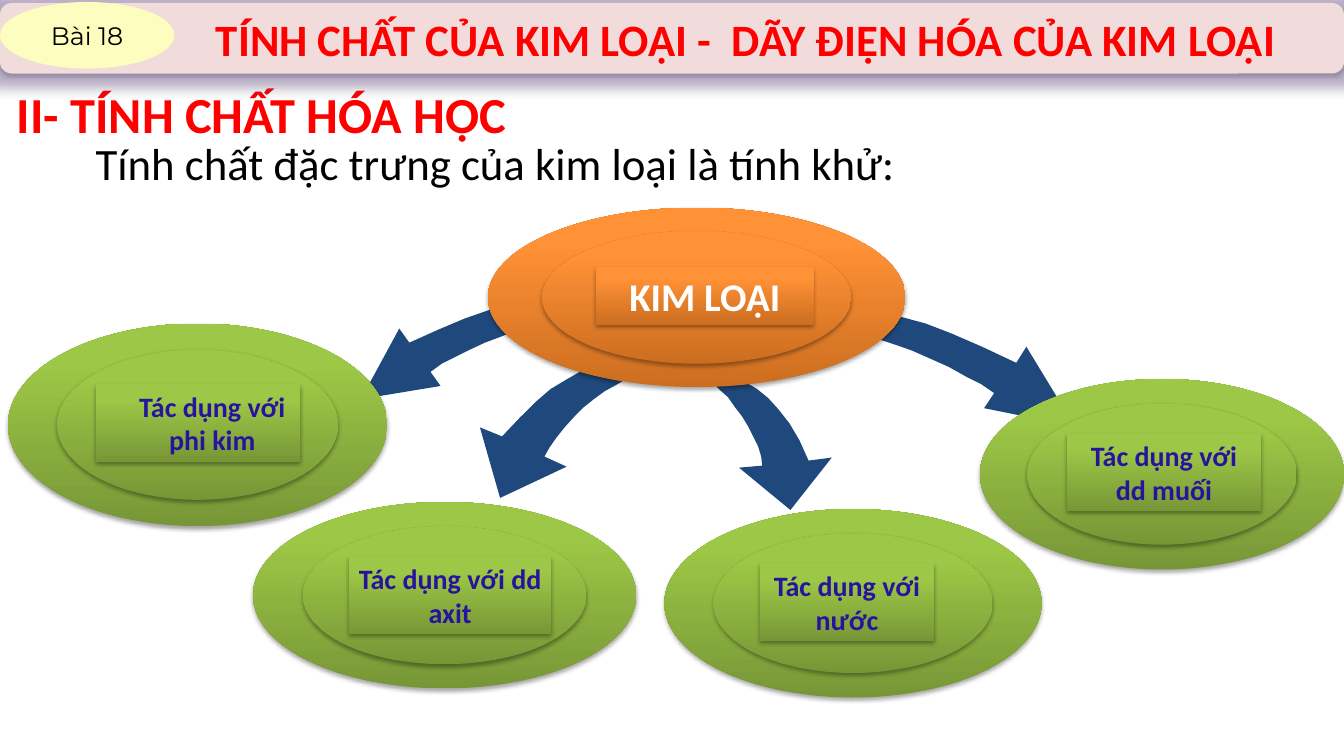
from pptx import Presentation
from pptx.dml.color import RGBColor
from pptx.enum.shapes import MSO_SHAPE
from pptx.enum.text import MSO_ANCHOR, PP_ALIGN
from pptx.oxml import parse_xml
from pptx.oxml.ns import nsdecls, qn
from pptx.util import Inches, Pt

ELLIPSE, RECT, ROUND = MSO_SHAPE.OVAL, MSO_SHAPE.RECTANGLE, MSO_SHAPE.ROUNDED_RECTANGLE
LEFT, CENTER = PP_ALIGN.LEFT, PP_ALIGN.CENTER
MIDDLE, TOP = MSO_ANCHOR.MIDDLE, MSO_ANCHOR.TOP
COLS, ROWS, CELL = 1333, 750, Inches(0.01)
INNER = 0.74
GREEN, ORANGE = ("779737", "9DC746"), ("CC6E20", "FF9136")
NAVY, RED, BLACK, WHITE, INDIGO = "1F497D", "FF0000", "000000", "FFFFFF", "27149C"
PINK, CREAM, PURPLE = "F2DCDB", "FEFDC0", "8064A2"

ARROWS = [
    [(645, 373), (631, 367), (617, 364), (603, 363), (589, 365), (575, 369), (561, 377),
     (546, 386), (531, 399), (515, 415), (498, 433), (476, 424), (496, 494), (562, 463),
     (540, 453), (545, 444), (552, 434), (560, 424), (569, 414), (579, 404), (589, 396),
     (600, 388), (611, 382), (621, 376), (630, 373), (638, 372), (644, 374)],
    [(815, 330), (823, 321), (833, 315), (844, 310), (859, 309), (876, 310), (896, 315),
     (918, 321), (944, 331), (974, 344), (1008, 360), (1018, 344), (1066, 423), (976, 405),
     (986, 390), (973, 381), (957, 373), (941, 364), (923, 356), (905, 348), (888, 342),
     (870, 336), (855, 331), (841, 328), (830, 327), (821, 328), (816, 331)],
    [(685, 371), (700, 370), (714, 371), (727, 374), (739, 379), (751, 386), (762, 395),
     (772, 406), (783, 420), (793, 437), (802, 457), (825, 454), (784, 506), (733, 464),
     (756, 462), (755, 453), (752, 443), (747, 433), (742, 423), (736, 413), (729, 404),
     (722, 394), (714, 387), (707, 380), (699, 375), (692, 372), (686, 372)],
    [(576, 321), (569, 312), (560, 306), (549, 301), (536, 300), (521, 300), (504, 303),
     (484, 308), (461, 316), (435, 327), (406, 340), (396, 326), (358, 396), (437, 383),
     (427, 369), (438, 361), (452, 354), (466, 347), (481, 340), (497, 334), (512, 328),
     (527, 323), (541, 320), (553, 318), (563, 317), (571, 318), (575, 321)],
]

BUBBLES = [
    ("Tác dụng với phi kim", (8, 321, 376, 201), (95, 381, 203, 77), 38),
    ("Tác dụng với dd axit", (251, 498, 380, 185), (346, 552, 201, 77), 10),
    ("Tác dụng với nước", (659, 505, 374, 187), (754, 559, 172, 77), 10),
    ("Tác dụng với dd muối", (972, 376, 361, 189), (1058, 430, 193, 77), 10),
]


def rgb(value):
    """Turn a hex string into a colour."""
    return RGBColor.from_string(value)


def grid(*cells):
    """Turn grid cells into lengths."""
    return [round(c * CELL) for c in cells]


class Deck:
    """Hold the style and the current slide."""

    font = "Calibri"

    def __init__(self):
        """Open a deck with one title-only slide."""
        self.prs = Presentation()
        self.prs.slide_width, self.prs.slide_height = grid(COLS, ROWS)
        self.s = self.prs.slides.add_slide(self.prs.slide_layouts[5])

    def label(self, sp, text, size, color, bold=True, align=CENTER, anchor=MIDDLE, font=None):
        """Fill a shape with one formatted paragraph."""
        tf = sp.text_frame
        tf.word_wrap = True
        tf.vertical_anchor = anchor
        p = tf.paragraphs[0]
        p.text, p.alignment = text, align
        p.font.name, p.font.size, p.font.bold = font or self.font, Pt(size), bold
        p.font.color.rgb = rgb(color)
        return tf

    def effect(self, sp, tag, attrs, color, alpha):
        """Append one effect to a shape."""
        sp.element.spPr.find(qn("a:effectLst")).append(parse_xml(
            f'<a:{tag} {nsdecls("a")} {attrs}><a:srgbClr val="{color}">'
            f'<a:alpha val="{alpha}000"/></a:srgbClr></a:{tag}>'))

    def shadow(self, sp):
        """Give a shape the soft drop shadow."""
        self.effect(sp, "outerShdw", 'blurRad="40000" dist="23000" dir="5400000" rotWithShape="0"',
                    BLACK, 35)

    def shape(self, kind, box, fill, shapes=None):
        """Add a plain or graded preset shape without outline."""
        sp = (shapes or self.s.shapes).add_shape(kind, *grid(*box))
        sp.shadow.inherit = False
        sp.line.fill.background()
        if isinstance(fill, str):
            sp.fill.solid()
            sp.fill.fore_color.rgb = rgb(fill)
        else:
            sp.fill.gradient()
            sp.fill.gradient_angle = 90
            for stop, color, position in zip(sp.fill.gradient_stops, fill, (0, 0.8)):
                stop.color.rgb, stop.position = rgb(color), position
        return sp

    def text(self, box, text, size, color, bold):
        """Add a left-aligned text box."""
        sp = self.s.shapes.add_textbox(*grid(*box))
        self.label(sp, text, size, color, bold, LEFT, TOP)

    def arrow(self, points):
        """Add a curved arrow outline."""
        builder = self.s.shapes.build_freeform(*points[0], scale=CELL)
        builder.add_line_segments(points[1:], close=True)
        sp = builder.convert_to_shape()
        sp.shadow.inherit = False
        sp.fill.solid()
        sp.fill.fore_color.rgb = rgb(NAVY)
        sp.line.fill.background()

    def bubble(self, text, outer, tag, fill, size, color, inset=10):
        """Group two concentric ellipses and a label."""
        x, y, w, h = outer
        gap = (1 - INNER) / 2
        inner = (x + w * gap, y + h * gap, w * INNER, h * INNER)
        group = self.s.shapes.add_group_shape()
        for kind, box in ((ELLIPSE, outer), (ELLIPSE, inner), (RECT, tag)):
            sp = self.shape(kind, box, fill, group.shapes)
            self.shadow(sp)
        tf = self.label(sp, text, size, color)
        tf.margin_left = round(inset * CELL)

    def header(self, title, lesson):
        """Add the glowing title bar and the lesson badge."""
        bar = self.shape(ROUND, (0, 3, COLS, 70), PINK)
        self.effect(bar, "glow", 'rad="228600"', PURPLE, 40)
        self.shadow(bar)
        sp = self.s.shapes.title
        sp.left, sp.top, sp.width, sp.height = grid(190, 3, 1100, 70)
        tf = self.label(sp, title, 32, RED)
        tf.margin_left = tf.margin_right = 0
        bar.element.addnext(sp.element)
        badge = self.shape(ELLIPSE, (0, 2, 173, 66), CREAM)
        self.label(badge, lesson, 18, BLACK, False, font="Montserrat")


def main():
    """Build and save the slide."""
    deck = Deck()
    for points in ARROWS:
        deck.arrow(points)
    for text, outer, tag, inset in BUBBLES:
        deck.bubble(text, outer, tag, GREEN, 20, INDIGO, inset)
    deck.bubble("KIM LOẠI", (484, 206, 414, 178), (591, 265, 216, 57), ORANGE, 28, WHITE)
    deck.text((7, 78, 528, 71), "II- TÍNH CHẤT HÓA HỌC", 36, RED, True)
    deck.text((85, 130, 1125, 64), "Tính chất đặc trưng của kim loại là tính khử:", 32, BLACK, False)
    deck.header("TÍNH CHẤT CỦA KIM LOẠI -  DÃY ĐIỆN HÓA CỦA KIM LOẠI", "Bài 18")
    deck.prs.save("out.pptx")


if __name__ == "__main__":
    main()
